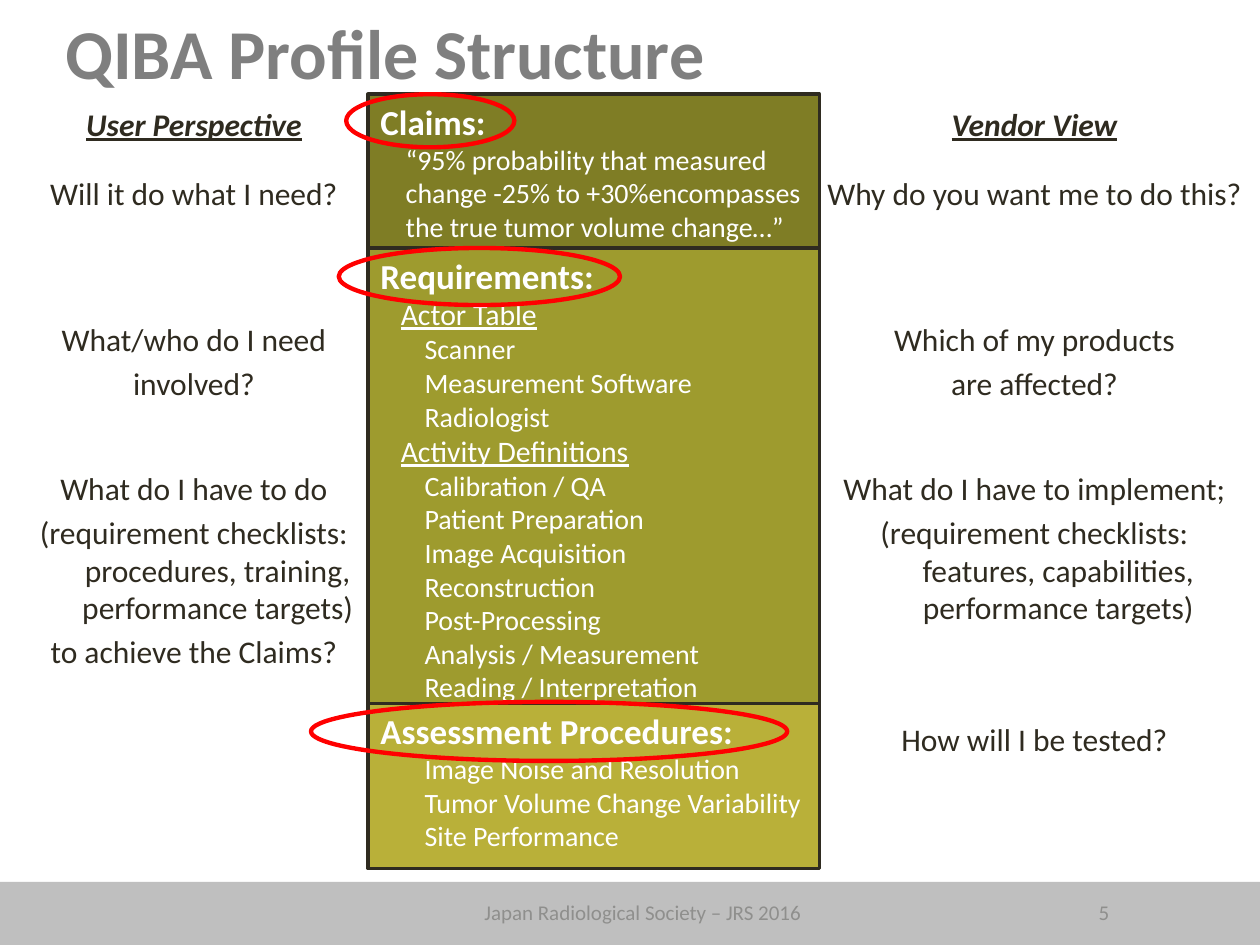
import pptx
import pptx.dml.color
import pptx.enum.shapes
import pptx.enum.text
import pptx.util

Cm = pptx.util.Cm
Pt = pptx.util.Pt
SHAPES = pptx.enum.shapes.MSO_SHAPE
ALIGN = pptx.enum.text.PP_ALIGN
ANCHOR = pptx.enum.text.MSO_ANCHOR

DARK, WHITE = "2F2B20", "FFFFFF"
HANGING = (0.96, -0.96)

# Indent is the left margin and the first-line offset, in cm
STYLES = {
    "title": {"font": {"size": Pt(40), "bold": True}, "color": "7F7F7F"},
    "footer": {"font": {"size": Pt(12)}, "color": "8F8F8D", "align": ALIGN.CENTER},
    "section": {"font": {"size": Pt(20), "bold": True}, "color": WHITE},
    "quote": {"font": {"size": Pt(16)}, "color": WHITE, "indent": (0.51, 0)},
    "group": {"font": {"size": Pt(17), "underline": True}, "color": WHITE,
              "indent": (0.41, 0)},
    "item": {"font": {"size": Pt(16)}, "color": WHITE, "indent": (0.89, 0)},
    "view": {"font": {"size": Pt(18), "bold": True, "italic": True, "underline": True},
             "color": DARK, "align": ALIGN.CENTER, "indent": HANGING},
    "question": {"font": {"size": Pt(18)}, "color": DARK, "align": ALIGN.CENTER,
                 "indent": HANGING},
}


def rgb(color):
    return pptx.dml.color.RGBColor.from_string(color)


def write_text(box, lines, frame_format):
    """Fill a shape with (style, text, points of space before) lines."""
    frame = box.text_frame
    frame.word_wrap = True
    for name, value in frame_format.items():
        setattr(frame, name, value)
    for number, (style_name, text, space_before) in enumerate(lines):
        style = STYLES[style_name]
        para = frame.add_paragraph() if number else frame.paragraphs[0]
        para.alignment = style.get("align", ALIGN.LEFT)
        para.space_before = Pt(space_before)
        left, first = style.get("indent", (0, 0))
        properties = para._p.get_or_add_pPr()
        properties.set("marL", str(Cm(left)))
        properties.set("indent", str(Cm(first)))
        para.text = text
        for span in para.runs:
            span.font.name = "Calibri"
            span.font.color.rgb = rgb(style["color"])
            for name, value in style["font"].items():
                setattr(span.font, name, value)


deck = pptx.Presentation()
deck.slide_width, deck.slide_height = Cm(25.4), Cm(19.05)
slide = deck.slides.add_slide(deck.slide_layouts[6])
shapes = slide.shapes

band = shapes.add_shape(SHAPES.RECTANGLE, 0, Cm(17.78), Cm(25.4), Cm(1.27))
band.shadow.inherit = False
band.fill.solid()
band.fill.fore_color.rgb = rgb("BFBFBF")
band.line.fill.background()

title = shapes.add_textbox(Cm(1.07), 0, Cm(23.7), Cm(2.21))
write_text(title, [("title", "QIBA Profile Structure", 0)],
           {"vertical_anchor": ANCHOR.MIDDLE, "margin_top": 0})

for left, width, text in [(5.66, 14.6, "Japan Radiological Society – JRS 2016"),
                          (21.72, 1.07, "5")]:
    footer = shapes.add_textbox(Cm(left), Cm(17.88), Cm(width), Cm(1.02))
    write_text(footer, [("footer", text, 0)], {"vertical_anchor": ANCHOR.MIDDLE})

# Profile sections, stacked from top to bottom
sections = [
    (1.9, 3.1, "7F7D25", "Claims:", [
        ("quote", ["“95% probability that measured change -25% to +30%encompasses "
                   "the true tumor volume change…”"])]),
    (5.0, 9.18, "9E9B2E", "Requirements:", [
        ("group", ["Actor Table"]),
        ("item", ["Scanner", "Measurement Software", "Radiologist"]),
        ("group", ["Activity Definitions"]),
        ("item", ["Calibration / QA", "Patient Preparation", "Image Acquisition",
                  "Reconstruction", "Post-Processing", "Analysis / Measurement",
                  "Reading / Interpretation"])]),
    (14.18, 3.33, "B9B039", "Assessment Procedures:", [
        ("item", ["Image Noise and Resolution", "Tumor Volume Change Variability",
                  "Site Performance"])]),
]
for top, height, color, heading, blocks in sections:
    section = shapes.add_shape(SHAPES.RECTANGLE, Cm(7.42), Cm(top), Cm(9.1), Cm(height))
    section.shadow.inherit = False
    section.fill.solid()
    section.fill.fore_color.rgb = rgb(color)
    section.line.color.rgb = rgb(DARK)
    section.line.width = Pt(2)
    lines = [("section", heading, 0)]
    lines += [(style, text, 0) for style, texts in blocks for text in texts]
    write_text(section, lines, {"vertical_anchor": ANCHOR.TOP})

# Questions asked on either side, with the space before each
columns = [
    (0, 7.82, "User Perspective", [
        ("Will it do what I need?", 18),
        ("What/who do I need", 62),
        ("involved?", 3.6),
        ("What do I have to do", 38),
        ("(requirement checklists: procedures, training, performance targets)", 3.6),
        ("to achieve the Claims?", 3.6)]),
    (16.51, 8.69, "Vendor View", [
        ("Why do you want me to do this?", 18),
        ("Which of my products", 62),
        ("are affected?", 3.6),
        ("What do I have to implement;", 38),
        ("(requirement checklists:\vfeatures, capabilities, performance targets)", 3.6),
        ("How will I be tested?", 53.5)]),
]
for left, width, heading, questions in columns:
    column = shapes.add_textbox(Cm(left), Cm(2.11), Cm(width), Cm(14.5))
    lines = [("view", heading, 0)]
    lines += [("question", text, space) for text, space in questions]
    write_text(column, lines, {"margin_left": 0, "margin_right": 0,
                               "margin_top": 0, "margin_bottom": 0})

# Rings around the section headings
for left, top, width, height in [(6.98, 1.9, 3.39, 1.07), (6.83, 5.0, 5.67, 1.15),
                                 (6.27, 14.15, 9.6, 1.19)]:
    ring = shapes.add_shape(SHAPES.OVAL, Cm(left), Cm(top), Cm(width), Cm(height))
    ring.shadow.inherit = False
    ring.fill.background()
    ring.line.color.rgb = rgb("FF0000")
    ring.line.width = Pt(2.5)

deck.save("out.pptx")
